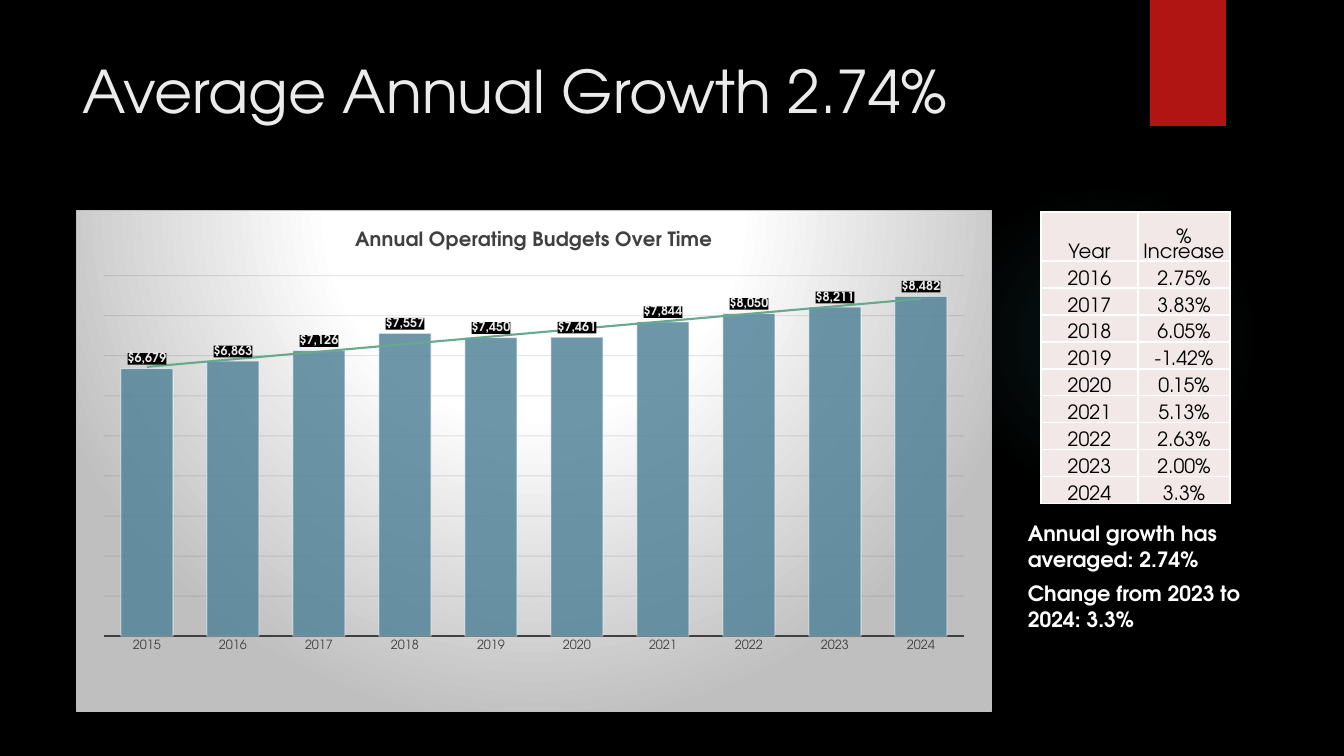
from dataclasses import dataclass

import pptx
import pptx.chart.data
import pptx.dml.color
import pptx.enum.chart
import pptx.enum.shapes
import pptx.enum.text
import pptx.oxml
import pptx.oxml.ns
import pptx.util

EMU_PER_PX = 914400 / 100.8
NAMESPACES = pptx.oxml.ns.nsdecls("a", "c")
ALIGN = pptx.enum.text.PP_ALIGN
ANCHOR = pptx.enum.text.MSO_ANCHOR


@dataclass(frozen=True)
class Theme:
    font: str = "TeX Gyre Adventor"
    black: str = "000000"
    white: str = "FFFFFF"
    title: str = "EBEBEB"
    red: str = "B01513"
    glow: str = "50B9C1"
    bar: str = "54849A"
    trend: str = "67A98D"
    axis: str = "404040"
    grid: str = "0D0D0D"
    edge: str = "BFBFBF"
    cell: str = "F2E8E7"
    title_size: int = 42
    note_size: int = 15
    table_size: int = 14
    chart_title_size: int = 14
    chart_size: int = 10
    label_size: int = 9


THEME = Theme()

BUDGETS = {
    "2015": 6679, "2016": 6863, "2017": 7126, "2018": 7557, "2019": 7450,
    "2020": 7461, "2021": 7844, "2022": 8050, "2023": 8211, "2024": 8482,
}
GROWTH_ROWS = [
    ("Year", "% Increase"),
    ("2016", "2.75%"), ("2017", "3.83%"), ("2018", "6.05%"),
    ("2019", "-1.42%"), ("2020", "0.15%"), ("2021", "5.13%"),
    ("2022", "2.63%"), ("2023", "2.00%"), ("2024", "3.3%"),
]


def px(length):
    return pptx.util.Emu(round(length * EMU_PER_PX))


def box(*lengths):
    return [px(length) for length in lengths]


def rgb(color):
    return pptx.dml.color.RGBColor.from_string(color)


def style_font(font, size, color, bold=False):
    font.name = THEME.font
    font.size = pptx.util.Pt(size)
    font.bold = bold
    font.color.rgb = rgb(color)


def put_text(frame, text, *, size, color, bold=False, align=ALIGN.LEFT, spacing=1.0):
    frame.word_wrap = True
    paragraph = frame.paragraphs[0]
    paragraph.alignment = align
    paragraph.line_spacing = spacing
    run = paragraph.add_run()
    run.text = text
    style_font(run.font, size, color, bold)


def style_line(line, color, width):
    line.color.rgb = rgb(color)
    line.width = pptx.util.Pt(width)


def set_opacity(colors, percent):
    for color in colors:
        color.append(pptx.oxml.parse_xml(f'<a:alpha {NAMESPACES} val="{percent * 1000}"/>'))


def radial_gradient(stops, top=50, bottom=50):
    marks = "".join(
        f'<a:gs pos="{place * 1000}"><a:srgbClr val="{color}">'
        f'<a:alpha val="{opacity * 1000}"/></a:srgbClr></a:gs>'
        for place, color, opacity in stops
    )
    return (
        f'<a:gradFill {NAMESPACES} rotWithShape="1"><a:gsLst>{marks}</a:gsLst>'
        f'<a:path path="circle"><a:fillToRect l="50000" t="{top * 1000}" '
        f'r="50000" b="{bottom * 1000}"/></a:path></a:gradFill>'
    )


def add_decoration(slide, preset, bounds):
    decoration = slide.shapes.add_shape(preset, *box(*bounds))
    decoration.shadow.inherit = False
    decoration.line.fill.background()
    return decoration


def add_glow(slide):
    glow = add_decoration(slide, pptx.enum.shapes.MSO_SHAPE.OVAL, (949, 184, 310, 310))
    stops = [(0, THEME.glow, 7), (36, THEME.glow, 6), (69, THEME.glow, 0)]
    geometry = glow.element.spPr.find(pptx.oxml.ns.qn("a:prstGeom"))
    geometry.addnext(pptx.oxml.parse_xml(radial_gradient(stops)))


def add_ribbon(slide):
    ribbon = add_decoration(slide, pptx.enum.shapes.MSO_SHAPE.RECTANGLE, (1150, 0, 76, 126))
    ribbon.fill.solid()
    ribbon.fill.fore_color.rgb = rgb(THEME.red)


def add_title(slide, text):
    title = slide.shapes.title
    title.left, title.top, title.width, title.height = box(72, 50, 1037, 154)
    title.text_frame.auto_size = pptx.enum.text.MSO_AUTO_SIZE.NONE
    title.text_frame.vertical_anchor = ANCHOR.TOP
    put_text(title.text_frame, text, size=THEME.title_size, color=THEME.title)


def add_note(slide, text, top):
    note = slide.shapes.add_textbox(*box(1018, top, 257, 61))
    put_text(note.text_frame, text, size=THEME.note_size, color=THEME.white, bold=True)


def style_axes(chart):
    years = chart.category_axis
    years.major_tick_mark = pptx.enum.chart.XL_TICK_MARK.NONE
    years.has_major_gridlines = False
    style_font(years.tick_labels.font, THEME.label_size, THEME.axis)
    style_line(years.format.line, THEME.axis, 1.5)
    dollars = chart.value_axis
    dollars.minimum_scale, dollars.maximum_scale, dollars.major_unit = 0, 9000, 1000
    dollars.has_major_gridlines = True
    style_line(dollars.major_gridlines.format.line, THEME.grid, 0.75)
    set_opacity(chart.element.xpath(".//c:majorGridlines//a:srgbClr"), 10)
    dollars.visible = False


def style_bars(chart):
    plot = chart.plots[0]
    plot.gap_width = 65
    plot.vary_by_categories = False
    bars = plot.series[0]
    bars.format.fill.solid()
    bars.format.fill.fore_color.rgb = rgb(THEME.bar)
    style_line(bars.format.line, THEME.white, 0.75)
    set_opacity(chart.element.xpath(".//c:ser/c:spPr/a:solidFill/a:srgbClr"), 85)
    set_opacity(chart.element.xpath(".//c:ser/c:spPr/a:ln//a:srgbClr"), 50)

    labels = bars.data_labels
    labels.show_value = True
    labels.position = pptx.enum.chart.XL_LABEL_POSITION.OUTSIDE_END
    labels.number_format = '"$"#,##0'
    labels.number_format_is_linked = False
    style_font(labels.font, THEME.label_size, THEME.title, bold=True)
    label_text = chart.element.xpath(".//c:ser/c:dLbls/c:txPr")[0]
    label_text.addprevious(pptx.oxml.parse_xml(
        f'<c:spPr {NAMESPACES}><a:solidFill><a:srgbClr val="{THEME.black}"/></a:solidFill></c:spPr>'
    ))
    categories = chart.element.xpath(".//c:ser/c:cat")[0]
    categories.addprevious(pptx.oxml.parse_xml(
        f'<c:trendline {NAMESPACES}><c:spPr><a:ln w="19050"><a:solidFill>'
        f'<a:srgbClr val="{THEME.trend}"/></a:solidFill></a:ln></c:spPr>'
        '<c:trendlineType val="linear"/><c:dispRSqr val="0"/><c:dispEq val="0"/></c:trendline>'
    ))


def style_chart_area(chart):
    stops = [(0, THEME.white, 100), (39, THEME.white, 100), (100, THEME.edge, 100)]
    chart.element.find(pptx.oxml.ns.qn("c:chart")).addnext(pptx.oxml.parse_xml(
        f'<c:spPr {NAMESPACES}>{radial_gradient(stops, -80, 180)}<a:ln w="9525"><a:solidFill>'
        f'<a:srgbClr val="{THEME.edge}"/></a:solidFill></a:ln></c:spPr>'
    ))
    for layout in chart.element.xpath(".//c:plotArea/c:layout"):
        layout.getparent().remove(layout)
    places = "".join(
        f'<c:{side} val="{share}"/>'
        for side, share in {"x": 0.03, "y": 0.13, "w": 0.94, "h": 0.72}.items()
    )
    chart.element.xpath(".//c:plotArea")[0].insert(0, pptx.oxml.parse_xml(
        f'<c:layout {NAMESPACES}><c:manualLayout><c:layoutTarget val="inner"/>'
        f'<c:xMode val="edge"/><c:yMode val="edge"/>{places}</c:manualLayout></c:layout>'
    ))


def add_budget_chart(slide):
    budgets = pptx.chart.data.CategoryChartData(number_format='"$"#,##0')
    budgets.categories = list(BUDGETS)
    budgets.add_series("Series 1", list(BUDGETS.values()))
    chart = slide.shapes.add_chart(
        pptx.enum.chart.XL_CHART_TYPE.COLUMN_CLUSTERED, *box(76, 210, 916, 502), budgets
    ).chart
    chart.has_legend = False
    style_font(chart.font, THEME.chart_size, THEME.white)
    put_text(chart.chart_title.text_frame, "Annual Operating Budgets Over Time",
             size=THEME.chart_title_size, color=THEME.axis, bold=True, align=ALIGN.CENTER)
    style_axes(chart)
    style_bars(chart)
    style_chart_area(chart)


def style_cell(cell, text):
    cell.margin_left = cell.margin_right = cell.margin_top = px(1)
    cell.margin_bottom = 0
    cell.vertical_anchor = ANCHOR.BOTTOM
    put_text(cell.text_frame, text, size=THEME.table_size, color=THEME.black,
             align=ALIGN.CENTER, spacing=0.8)
    properties = cell._tc.get_or_add_tcPr()
    for side in ("lnL", "lnR", "lnT", "lnB"):
        properties.append(pptx.oxml.parse_xml(
            f'<a:{side} {NAMESPACES} w="12700"><a:solidFill>'
            f'<a:srgbClr val="{THEME.white}"/></a:solidFill></a:{side}>'
        ))
    cell.fill.solid()
    cell.fill.fore_color.rgb = rgb(THEME.cell)


def add_growth_table(slide):
    table = slide.shapes.add_table(len(GROWTH_ROWS), 2, *box(1041, 212, 189, 292)).table
    table.first_row = table.horz_banding = False
    for column, width in zip(table.columns, (97, 92)):
        column.width = px(width)
    for index, (row, texts) in enumerate(zip(table.rows, GROWTH_ROWS)):
        row.height = px(27 if index else 49)
        for cell, text in zip(row.cells, texts):
            style_cell(cell, text)


def main():
    deck = pptx.Presentation()
    deck.slide_width, deck.slide_height = box(1344, 756)
    slide = deck.slides.add_slide(deck.slide_layouts.get_by_name("Title Only"))
    slide.background.fill.solid()
    slide.background.fill.fore_color.rgb = rgb(THEME.black)
    add_glow(slide)
    add_ribbon(slide)
    add_note(slide, "Annual growth has averaged: 2.74%", 516)
    add_note(slide, "Change from 2023 to 2024: 3.3%", 576)
    add_budget_chart(slide)
    add_growth_table(slide)
    add_title(slide, "Average Annual Growth 2.74%")
    deck.save("out.pptx")


if __name__ == "__main__":
    main()
